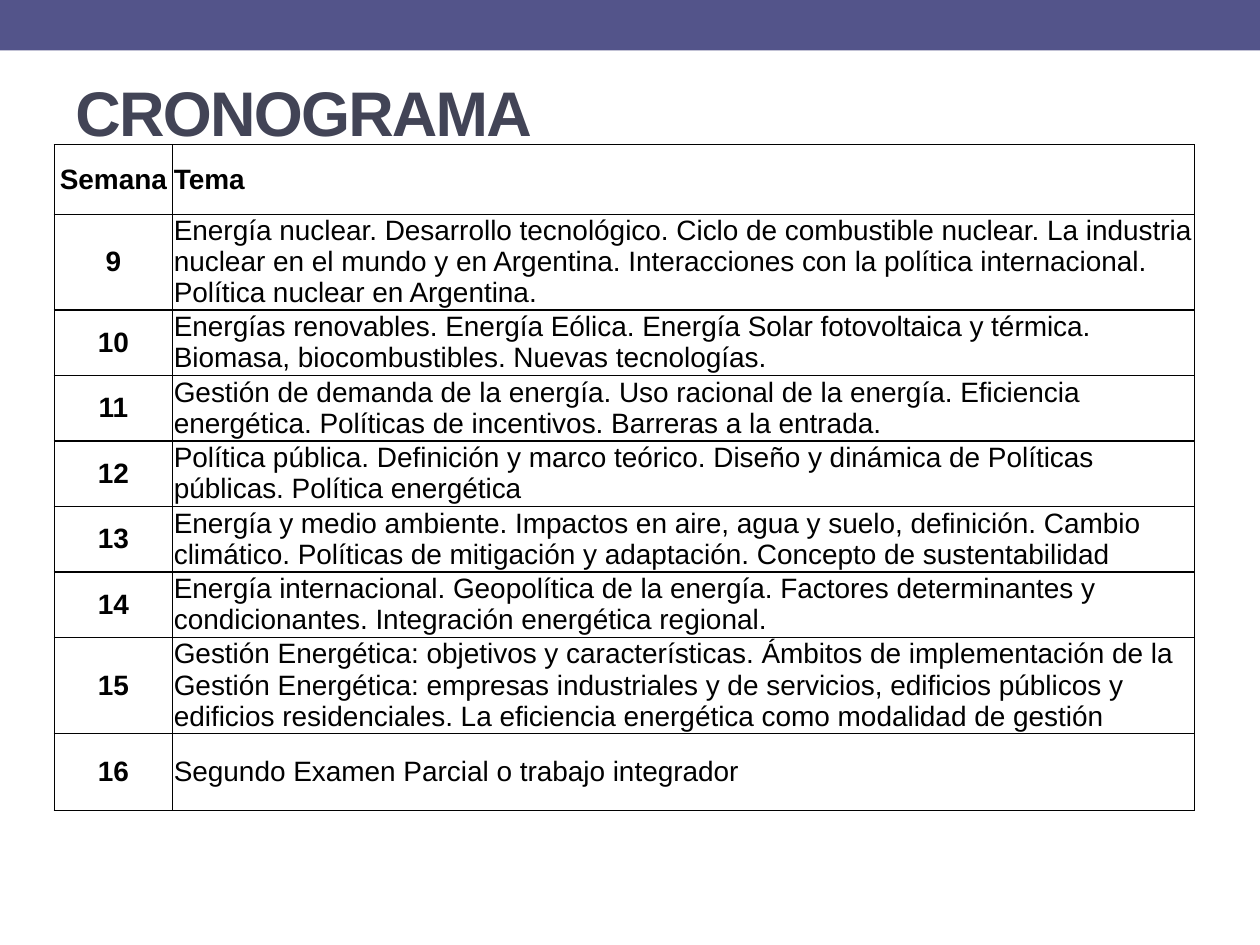
import pptx
import pptx.util
import pptx.dml.color
import pptx.enum.shapes
import pptx.enum.text
import pptx.oxml.ns
import lxml.etree

Inches = pptx.util.Inches
Pt = pptx.util.Pt
RGB = pptx.dml.color.RGBColor
Align = pptx.enum.text.PP_ALIGN
Anchor = pptx.enum.text.MSO_ANCHOR

hues = {"band": "53548A", "title": "424456", "head": "000000", "body": "010101", "line": "010101"}

rows = [
    ("Semana", "Tema", 0.55),
    ("9", "Energía nuclear. Desarrollo tecnológico. Ciclo de combustible nuclear. La industria nuclear en el mundo y en Argentina. Interacciones con la política internacional. Política nuclear en Argentina.", 0.76),
    ("10", "Energías renovables. Energía Eólica. Energía Solar fotovoltaica y térmica. Biomasa, biocombustibles. Nuevas tecnologías.", 0.52),
    ("11", "Gestión de demanda de la energía. Uso racional de la energía. Eficiencia energética. Políticas de incentivos. Barreras a la entrada.", 0.52),
    ("12", "Política pública. Definición y marco teórico. Diseño y dinámica de Políticas públicas. Política energética", 0.52),
    ("13", "Energía y medio ambiente. Impactos en aire, agua y suelo, definición. Cambio climático. Políticas de mitigación y adaptación. Concepto de sustentabilidad", 0.52),
    ("14", "Energía internacional. Geopolítica de la energía. Factores determinantes y condicionantes. Integración energética regional.", 0.52),
    ("15", "Gestión Energética: objetivos y características. Ámbitos de implementación de la Gestión Energética: empresas industriales y de servicios, edificios públicos y edificios residenciales. La eficiencia energética como modalidad de gestión", 0.76),
    ("16", "Segundo Examen Parcial o trabajo integrador", 0.61),
]
widths = [0.94, 8.11]


def style(para, size, hue, bold):
    font = para.runs[0].font
    font.name = "Arial"
    font.size = Pt(size)
    font.bold = bold
    font.color.rgb = RGB.from_string(hues[hue])


def border(cell):
    props = cell._tc.get_or_add_tcPr()
    for side in ("a:lnL", "a:lnR", "a:lnT", "a:lnB"):
        line = lxml.etree.SubElement(props, pptx.oxml.ns.qn(side), w=str(Pt(0.75)))
        fill = lxml.etree.SubElement(line, pptx.oxml.ns.qn("a:solidFill"))
        lxml.etree.SubElement(fill, pptx.oxml.ns.qn("a:srgbClr"), val=hues["line"])


deck = pptx.Presentation()
deck.slide_width = Inches(10)
deck.slide_height = Inches(7.5)
slide = deck.slides.add_slide(deck.slide_layouts[6])

band = slide.shapes.add_shape(pptx.enum.shapes.MSO_SHAPE.RECTANGLE, 0, 0, Inches(10), Inches(0.4))
band.shadow.inherit = False
band.fill.solid()
band.fill.fore_color.rgb = RGB.from_string(hues["band"])
band.line.fill.background()

high = sum(row[2] for row in rows)
table = slide.shapes.add_table(len(rows), 2, Inches(0.43), Inches(1.15), Inches(sum(widths)), Inches(high)).table
table.first_row = False
table.horz_banding = False
for col, wide in zip(table.columns, widths):
    col.width = Inches(wide)

for r, (week, topic, tall) in enumerate(rows):
    table.rows[r].height = Inches(tall)
    for c, text in enumerate((week, topic)):
        cell = table.cell(r, c)
        cell.margin_left = cell.margin_right = Inches(0.01)
        cell.margin_top = cell.margin_bottom = Inches(0.01)
        cell.vertical_anchor = Anchor.MIDDLE
        cell.text_frame.text = text
        para = cell.text_frame.paragraphs[0]
        para.alignment = Align.CENTER if c == 0 else Align.LEFT
        bold = r == 0 or c == 0
        style(para, 16, "head" if bold else "body", bold)
        border(cell)
        cell.fill.background()

title = slide.shapes.add_textbox(Inches(0.5), Inches(0.58), Inches(9), Inches(1.08))
frame = title.text_frame
frame.word_wrap = True
frame.vertical_anchor = Anchor.TOP
frame.margin_top = 0
frame.text = "CRONOGRAMA"
style(frame.paragraphs[0], 36, "title", True)
frame.paragraphs[0].runs[0].font._element.set("spc", "-100")

deck.save("out.pptx")
